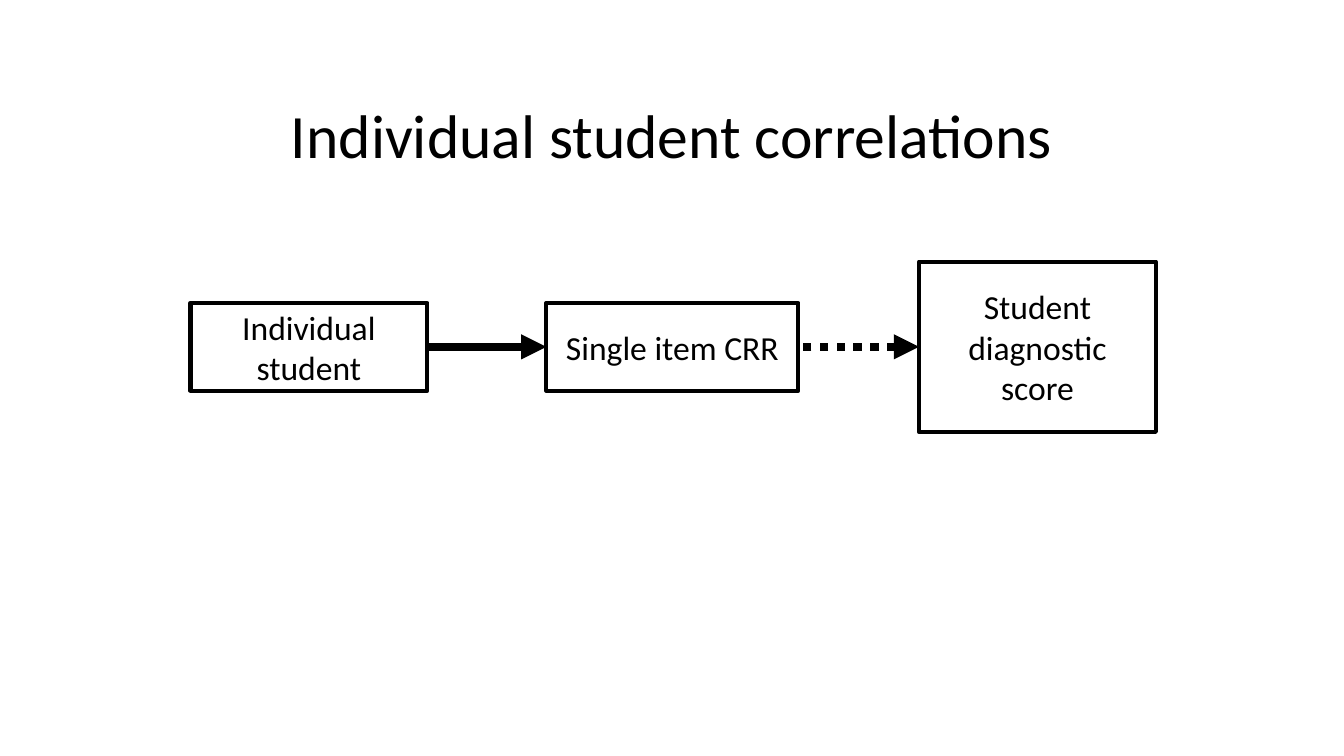
from lxml import etree
from pptx import Presentation
from pptx.dml.color import RGBColor
from pptx.enum.dml import MSO_LINE
from pptx.enum.shapes import MSO_CONNECTOR, MSO_SHAPE
from pptx.enum.text import MSO_ANCHOR, MSO_AUTO_SIZE, PP_ALIGN
from pptx.oxml.ns import qn
from pptx.util import Cm, Pt

BLACK = RGBColor(0, 0, 0)
RECTANGLE = MSO_SHAPE.RECTANGLE
STRAIGHT = MSO_CONNECTOR.STRAIGHT
DOTTED = MSO_LINE.ROUND_DOT
MIDDLE = MSO_ANCHOR.MIDDLE
CENTER = PP_ALIGN.CENTER
NO_AUTOFIT = MSO_AUTO_SIZE.NONE
LEFT_SITE, RIGHT_SITE = 1, 3
AXIS = 8.74  # shared vertical centre of the boxes, in cm


def write_text(shape, text, size):
    frame = shape.text_frame
    frame.text = text
    for name, value in {"word_wrap": True, "auto_size": NO_AUTOFIT,
                        "vertical_anchor": MIDDLE}.items():
        setattr(frame, name, value)
    para = frame.paragraphs[0]
    para.alignment = CENTER
    font = para.runs[0].font
    for name, value in {"name": "Calibri", "size": Pt(size)}.items():
        setattr(font, name, value)
    font.color.rgb = BLACK
    return para


deck = Presentation()
deck.slide_width, deck.slide_height = Cm(33.87), Cm(19.05)
page = deck.slides.add_slide(deck.slide_layouts[5])

# Title
title = page.shapes.title
for name, value in {"left": 2.33, "top": 1.65, "width": 29.21, "height": 3.68}.items():
    setattr(title, name, Cm(value))
write_text(title, "Individual student correlations", 44).line_spacing = 0.9

# Boxes: text, left, width, height
boxes = []
for text, left, width, height in [
    ("Individual student", 4.8, 5.97, 2.21),
    ("Single item CRR", 13.77, 6.35, 2.21),
    ("Student diagnostic score", 23.16, 5.97, 4.29),
]:
    box = page.shapes.add_shape(RECTANGLE, Cm(left), Cm(AXIS - height / 2),
                                Cm(width), Cm(height))
    box.shadow.inherit = False
    box.fill.background()
    box.line.color.rgb = BLACK
    box.line.width = Pt(3)
    write_text(box, text, 24)
    boxes.append(box)

# Arrows, each starting at the box it points to
for source, target, dash in zip(boxes, boxes[1:], [None, DOTTED]):
    arrow = page.shapes.add_connector(STRAIGHT, 0, 0, 0, 0)
    arrow.begin_connect(target, LEFT_SITE)
    arrow.end_connect(source, RIGHT_SITE)
    arrow.line.color.rgb = BLACK
    arrow.line.width = Pt(6)
    arrow.line.dash_style = dash
    etree.SubElement(arrow.line._get_or_add_ln(), qn("a:headEnd"), type="triangle")
    etree.SubElement(arrow._element.spPr, qn("a:effectLst"))

deck.save("out.pptx")
